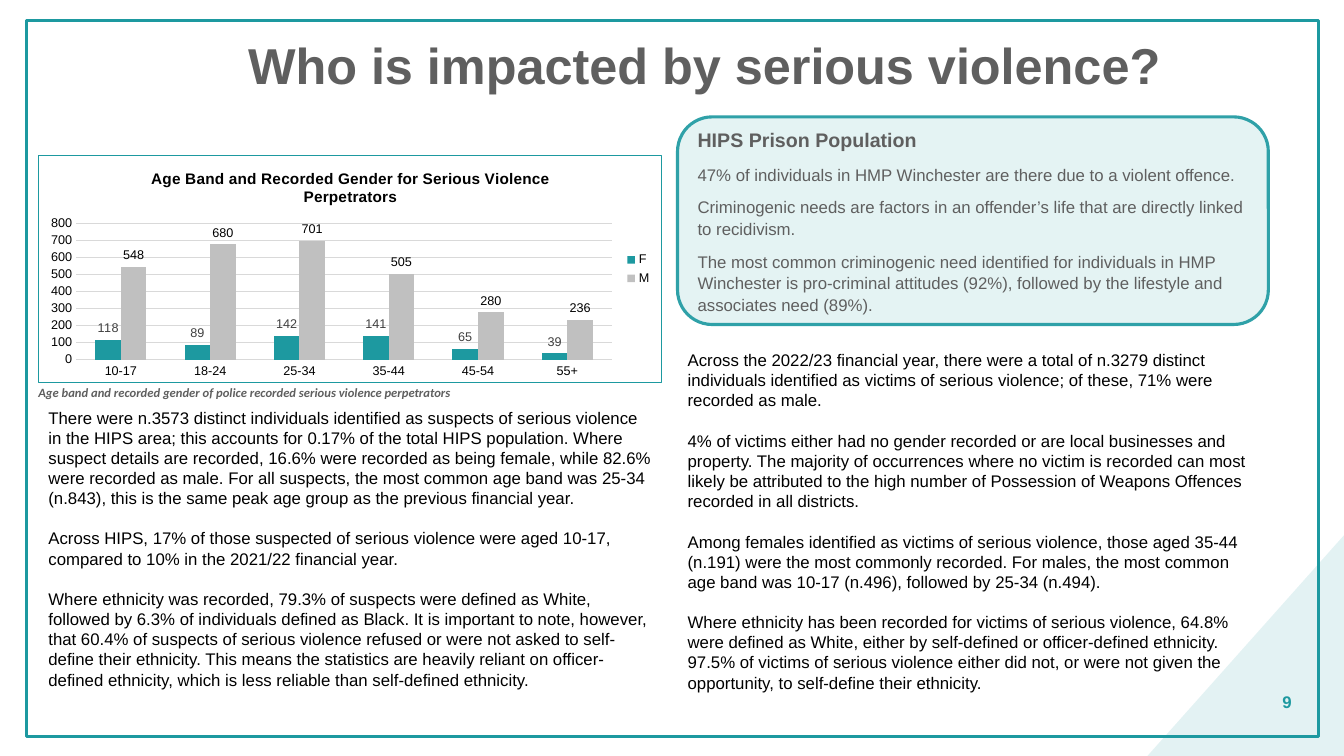
from pptx import Presentation
from pptx.chart.data import CategoryChartData
from pptx.dml.color import RGBColor
from pptx.enum.chart import XL_CHART_TYPE, XL_LABEL_POSITION, XL_LEGEND_POSITION, XL_TICK_MARK
from pptx.enum.shapes import MSO_SHAPE
from pptx.enum.text import MSO_ANCHOR, MSO_AUTO_SIZE, PP_ALIGN
from pptx.oxml import parse_xml
from pptx.oxml.ns import qn
from pptx.util import Pt

PX = 9144  # 100 px to the inch
TEAL = RGBColor(0x1D, 0x99, 0xA0)
PANEL_LINE = RGBColor(0x2F, 0xA1, 0xA8)
PANEL_FILL = RGBColor(0xE4, 0xF3, 0xF3)
GREY = RGBColor(0x5F, 0x5F, 0x5F)
SILVER = RGBColor(0xC0, 0xC0, 0xC0)
GRID = RGBColor(0xD9, 0xD9, 0xD9)
DARK = RGBColor(0x40, 0x40, 0x40)
BLACK = RGBColor(0, 0, 0)
COLUMN_CLUSTERED = XL_CHART_TYPE.COLUMN_CLUSTERED
OUTSIDE_END = XL_LABEL_POSITION.OUTSIDE_END
LEGEND_RIGHT = XL_LEGEND_POSITION.RIGHT
NO_TICK = XL_TICK_MARK.NONE
MIDDLE, TOP = MSO_ANCHOR.MIDDLE, MSO_ANCHOR.TOP
LEFT, RIGHT = PP_ALIGN.LEFT, PP_ALIGN.RIGHT
TWO_CONTENT = 3

TITLE = "Who is impacted by serious violence?"
PAGE_NUMBER = "9"
CAPTION = "Age band and recorded gender of police recorded serious violence perpetrators"
CHART_TITLE = "Age Band and Recorded Gender for Serious Violence Perpetrators"
AGE_BANDS = ["10-17", "18-24", "25-34", "35-44", "45-54", "55+"]
GENDERS = [  # name, counts, bar colour, label colour
    ("F", (118, 89, 142, 141, 65, 39), TEAL, DARK),
    ("M", (548, 680, 701, 505, 280, 236), SILVER, BLACK),
]
SUSPECTS = [
    "There were n.3573 distinct individuals identified as suspects of serious violence in the "
    "HIPS area; this accounts for 0.17% of the total HIPS population. Where suspect details are "
    "recorded, 16.6% were recorded as being female, while 82.6% were recorded as male. For all "
    "suspects, the most common age band was 25-34 (n.843), this is the same peak age group as "
    "the previous financial year.",
    "Across HIPS, 17% of those suspected of serious violence were aged 10-17, compared to 10% in "
    "the 2021/22 financial year.",
    "Where ethnicity was recorded, 79.3% of suspects were defined as White, followed by 6.3% of "
    "individuals defined as Black. It is important to note, however, that 60.4% of suspects of "
    "serious violence refused or were not asked to self-define their ethnicity. This means the "
    "statistics are heavily reliant on officer-defined ethnicity, which is less reliable than "
    "self-defined ethnicity.",
]
VICTIMS = [
    "Across the 2022/23 financial year, there were a total of n.3279 distinct individuals "
    "identified as victims of serious violence; of these, 71% were recorded as male.",
    "4% of victims either had no gender recorded or are local businesses and property. The "
    "majority of occurrences where no victim is recorded can most likely be attributed to the "
    "high number of Possession of Weapons Offences recorded in all districts.",
    "Among females identified as victims of serious violence, those aged 35-44 (n.191) were the "
    "most commonly recorded. For males, the most common age band was 10-17 (n.496), followed by "
    "25-34 (n.494).",
    "Where ethnicity has been recorded for victims of serious violence, 64.8% were defined as "
    "White, either by self-defined or officer-defined ethnicity. 97.5% of victims of serious "
    "violence either did not, or were not given the opportunity, to self-define their ethnicity.",
]
PRISON = [
    "HIPS Prison Population",
    "47% of individuals in HMP Winchester are there due to a violent offence.",
    "Criminogenic needs are factors in an offender’s life that are directly linked to recidivism.",
    "The most common criminogenic need identified for individuals in HMP Winchester is "
    "pro-criminal attitudes (92%), followed by the lifestyle and associates need (89%).",
]


def px(*lengths):
    return [length * PX for length in lengths]


def set_font(font, size, color, bold=False, italic=False, name="Arial"):
    font.name, font.size, font.bold, font.italic = name, Pt(size), bold, italic
    font.color.rgb = color


def write(box, texts, size, color, after=0, spacing=1.0, align=LEFT, anchor=TOP, **style):
    """Fill a shape with evenly spaced, unbulleted paragraphs in one style."""
    frame = box.text_frame
    frame.text = "\n".join(texts)
    frame.word_wrap, frame.auto_size = True, MSO_AUTO_SIZE.NONE
    frame.vertical_anchor = anchor
    for para in frame.paragraphs:
        properties = para._p.get_or_add_pPr()
        properties.set("marL", "0")
        properties.set("indent", "0")
        properties.append(properties.makeelement(qn("a:buNone"), {}))
        para.alignment, para.line_spacing = align, spacing
        para.space_before, para.space_after = Pt(0), Pt(after)
        for span in para.runs:
            set_font(span.font, size, color, **style)


def place(box, left, top, width, height):
    box.left, box.top, box.width, box.height = px(left, top, width, height)


def add_plain_shape(page, kind, frame, fill=None, line=None):
    shape = page.shapes.add_shape(kind, *px(*frame))
    shape.shadow.inherit = False
    if fill is None:
        shape.fill.background()
    else:
        shape.fill.solid()
        shape.fill.fore_color.rgb = fill
    if line is None:
        shape.line.fill.background()
    else:
        shape.line.color.rgb, shape.line.width = line, Pt(2.25)
    return shape


def add_age_chart(page):
    data = CategoryChartData()
    data.categories = AGE_BANDS
    for name, counts, _, _ in GENDERS:
        data.add_series(name, counts)
    chart = page.shapes.add_chart(COLUMN_CLUSTERED, *px(38, 154, 619, 226), data).chart
    set_font(chart.font, 10, BLACK)
    chart.has_title = True
    chart.chart_title.text_frame.text = CHART_TITLE
    set_font(chart.chart_title.text_frame.paragraphs[0].runs[0].font, 11, BLACK, bold=True)
    chart.chart_title.include_in_layout = False
    chart.has_legend = True
    chart.legend.position, chart.legend.include_in_layout = LEGEND_RIGHT, False
    set_font(chart.legend.font, 9, BLACK)

    counts_axis, ages_axis = chart.value_axis, chart.category_axis
    for axis in (counts_axis, ages_axis):
        axis.major_tick_mark = axis.minor_tick_mark = NO_TICK
        set_font(axis.tick_labels.font, 9, BLACK)
    counts_axis.minimum_scale, counts_axis.maximum_scale, counts_axis.major_unit = 0, 800, 100
    counts_axis.format.line.fill.background()
    for line in (counts_axis.major_gridlines.format.line, ages_axis.format.line):
        line.color.rgb, line.width = GRID, Pt(0.75)

    plot = chart.plots[0]
    plot.vary_by_categories, plot.gap_width, plot.overlap = False, 150, 0
    for series, (_, _, bar_color, label_color) in zip(plot.series, GENDERS):
        series.format.fill.solid()
        series.format.fill.fore_color.rgb = bar_color
        labels = series.data_labels
        labels.show_value, labels.position = True, OUTSIDE_END
        set_font(labels.font, 9, label_color)

    namespaces = ('xmlns:c="http://schemas.openxmlformats.org/drawingml/2006/chart" '
                  'xmlns:a="http://schemas.openxmlformats.org/drawingml/2006/main"')
    chart_space = chart._chartSpace
    chart_space.find(qn("c:chart")).addnext(parse_xml(
        f'<c:spPr {namespaces}><a:solidFill><a:srgbClr val="FFFFFF"/></a:solidFill>'
        f'<a:ln w="9525"><a:solidFill><a:srgbClr val="{TEAL}"/></a:solidFill></a:ln></c:spPr>'))
    area = chart_space.find(".//" + qn("c:plotArea"))
    for old in area.findall(qn("c:layout")):
        area.remove(old)
    bounds = "".join(f'<c:{key} val="{value}"/>' for key, value in
                     (("x", 0.06), ("y", 0.3), ("w", 0.86), ("h", 0.6)))
    area.insert(0, parse_xml(
        f'<c:layout {namespaces}><c:manualLayout><c:layoutTarget val="inner"/>'
        f'<c:xMode val="edge"/><c:yMode val="edge"/>{bounds}</c:manualLayout></c:layout>'))


def main():
    deck = Presentation()
    deck.slide_width, deck.slide_height = px(1333, 750)
    page = deck.slides.add_slide(deck.slide_layouts[TWO_CONTENT])
    title, suspects, victims = page.placeholders

    add_plain_shape(page, MSO_SHAPE.RECTANGLE, (26, 20, 1282, 711), line=TEAL)
    corner = add_plain_shape(page, MSO_SHAPE.RIGHT_TRIANGLE, (1126, 543, 219, 195), fill=TEAL)
    corner.rotation = 270
    tint = corner.fill._xPr.find(".//" + qn("a:srgbClr"))
    tint.append(tint.makeelement(qn("a:alpha"), {"val": "12000"}))

    place(title, 236, 19, 1055, 97)
    write(title, [TITLE], 36, GREY, spacing=0.9, anchor=MIDDLE, bold=True)
    for column, texts, frame in ((suspects, SUSPECTS, (38, 399, 619, 293)),
                                 (victims, VICTIMS, (672, 342, 586, 353))):
        place(column, *frame)
        write(column, texts, 12, BLACK, after=14.4)

    add_age_chart(page)
    caption = page.shapes.add_textbox(*px(38, 382, 421, 15))
    write(caption, [CAPTION], 9, GREY, bold=True, italic=True, name="Calibri")
    inner = caption.text_frame
    inner.margin_left = inner.margin_right = inner.margin_top = inner.margin_bottom = 0

    panel = add_plain_shape(page, MSO_SHAPE.ROUNDED_RECTANGLE, (672, 116, 586, 206),
                            PANEL_FILL, PANEL_LINE)
    write(panel, PRISON, 12, GREY, after=8, spacing=1.07, anchor=MIDDLE)
    set_font(panel.text_frame.paragraphs[0].runs[0].font, 14, GREY, bold=True)

    number = page.shapes.add_textbox(*px(1258, 676, 33, 40))
    write(number, [PAGE_NUMBER], 12, TEAL, align=RIGHT, anchor=MIDDLE, bold=True)
    deck.save("out.pptx")


if __name__ == "__main__":
    main()
